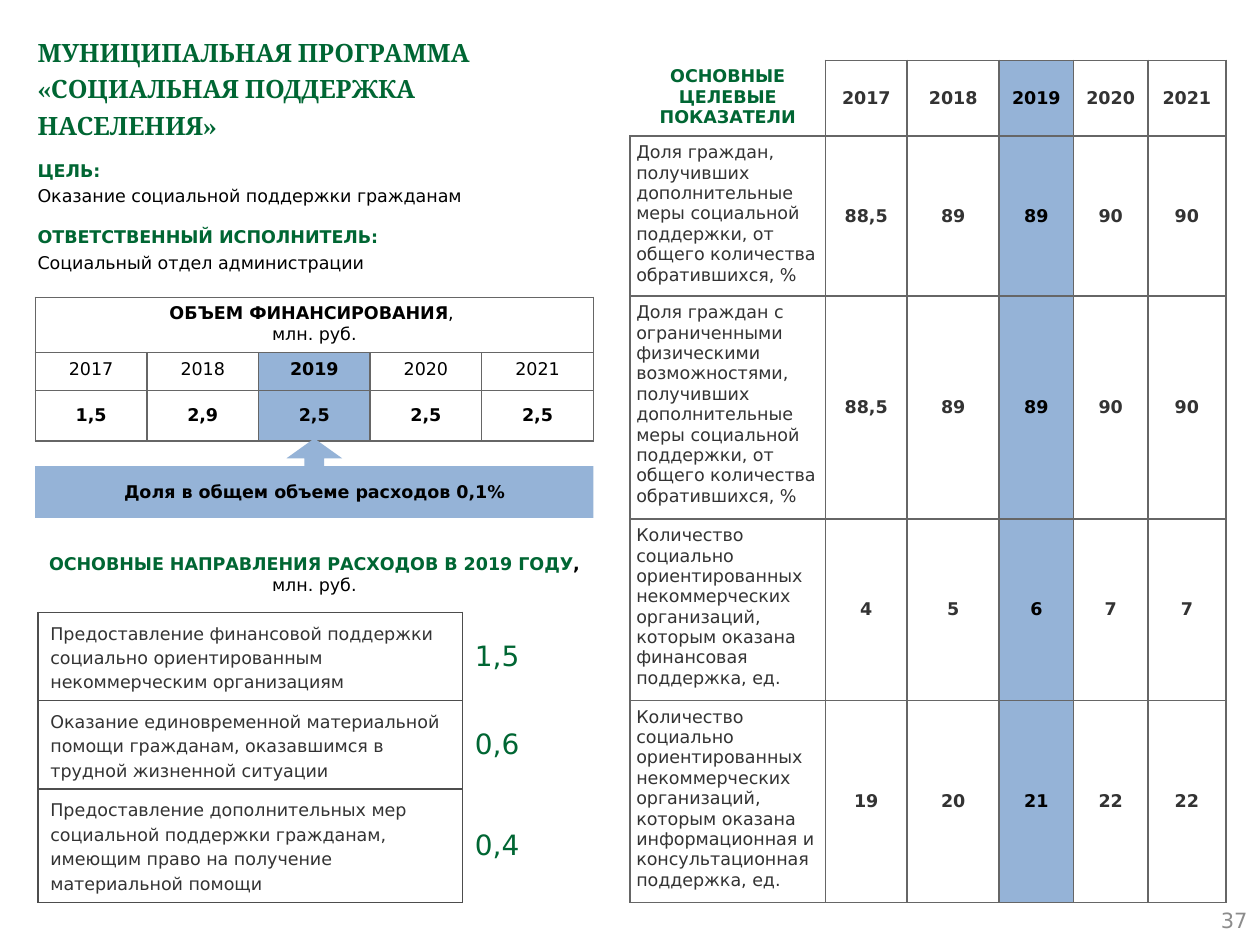
from lxml import etree
from pptx import Presentation, util as u
from pptx.dml.color import RGBColor
from pptx.enum import shapes, text
from pptx.oxml.ns import qn

GREEN = RGBColor(0x00, 0x66, 0x33)
BLUE = RGBColor(0x95, 0xB3, 0xD7)
BLACK = RGBColor(0, 0, 0)
DARK = RGBColor(0x33, 0x33, 0x33)
PAGE_GRAY = RGBColor(0x8C, 0x8C, 0x8C)
RULE_GRAY = RGBColor(0x66, 0x66, 0x66)
RULE_DARK = RGBColor(0x4D, 0x4D, 0x4D)

LEFT, CENTER, RIGHT = (text.PP_ALIGN.LEFT, text.PP_ALIGN.CENTER, text.PP_ALIGN.RIGHT)
TOP, MIDDLE = text.MSO_ANCHOR.TOP, text.MSO_ANCHOR.MIDDLE
NO_STYLE = "{2D5ABB26-0587-4C30-8999-92F81FD0307C}"
YEARS = ["2017", "2018", "2019", "2020", "2021"]
CURRENT = YEARS.index("2019")
FUNDING = ["1,5", "2,9", "2,5", "2,5", "2,5"]
EXPENSES = [
    ("Предоставление финансовой поддержки социально ориентированным "
     "некоммерческим организациям", "1,5"),
    ("Оказание единовременной материальной помощи гражданам, оказавшимся "
     "в трудной жизненной ситуации", "0,6"),
    ("Предоставление дополнительных мер социальной поддержки гражданам, "
     "имеющим право на получение материальной помощи", "0,4"),
]
INDICATORS = [
    ("Доля граждан, получивших дополнительные меры социальной поддержки, "
     "от общего количества обратившихся, %", ["88,5", "89", "89", "90", "90"]),
    ("Доля граждан с ограниченными физическими возможностями, получивших "
     "дополнительные меры социальной поддержки, от общего количества "
     "обратившихся, %", ["88,5", "89", "89", "90", "90"]),
    ("Количество социально ориентированных некоммерческих организаций, "
     "которым оказана финансовая поддержка, ед.", ["4", "5", "6", "7", "7"]),
    ("Количество социально ориентированных некоммерческих организаций, "
     "которым оказана информационная и консультационная поддержка, ед.",
     ["19", "20", "21", "22", "22"]),
]


def run(value, color=BLACK, bold=False, size=10, name="DejaVu Sans"):
    """Describe one run as its text, colour and font values."""
    return value, color, {"bold": bold, "size": u.Pt(size), "name": name}


def write(tf, paragraphs, **fmt):
    """Fill a text frame with paragraphs given as lists of runs."""
    for i, runs in enumerate(paragraphs):
        p = tf.add_paragraph() if i else tf.paragraphs[0]
        for key, value in fmt.items():
            setattr(p, key, value)
        for value, color, font in runs:
            for j, line in enumerate(value.split("\n")):
                if j:
                    p.add_line_break()
                r = p.add_run()
                r.text = line
                r.font.color.rgb = color
                for key, setting in font.items():
                    setattr(r.font, key, setting)


def add_text(s, at, paragraphs, anchor=TOP, **fmt):
    """Add a wrapping text box and return its text frame."""
    tf = s.shapes.add_textbox(*map(u.Inches, at)).text_frame
    tf.word_wrap = True
    tf.vertical_anchor = anchor
    write(tf, paragraphs, **fmt)
    return tf


def add_block(s, kind, at, adjustments, runs, fill=None):
    """Add a preset shape without outline and with centred text."""
    sp = s.shapes.add_shape(kind, *map(u.Inches, at))
    sp.shadow.inherit = False
    sp.line.fill.background()
    for i, value in enumerate(adjustments):
        sp.adjustments[i] = value
    if fill is None:
        sp.fill.background()
    else:
        sp.fill.solid()
        sp.fill.fore_color.rgb = fill
    sp.text_frame.word_wrap = True
    sp.text_frame.vertical_anchor = MIDDLE
    write(sp.text_frame, [runs], alignment=CENTER)


def add_table(s, left, top, cols, rows):
    """Add an unstyled table with the given column widths and row heights."""
    size = map(u.Inches, (left, top, sum(cols), sum(rows)))
    table = s.shapes.add_table(len(rows), len(cols), *size).table
    table._tbl.tblPr.find(qn("a:tableStyleId")).text = NO_STYLE
    for column, width in zip(table.columns, cols):
        column.width = u.Inches(width)
    for row, height in zip(table.rows, rows):
        row.height = u.Inches(height)
    return table


def set_cell(cell, paragraphs, rule, sides="LRTB", fill=None, anchor=MIDDLE,
             inset=0.05, **fmt):
    """Set the borders, fill, margins and text of one table cell."""
    tcPr = cell._tc.get_or_add_tcPr()
    for side in sides:
        ln = etree.SubElement(tcPr, qn(f"a:ln{side}"), w=str(u.Pt(1)))
        solid = etree.SubElement(ln, qn("a:solidFill"))
        etree.SubElement(solid, qn("a:srgbClr"), val=str(rule))
    if fill is None:
        cell.fill.background()
    else:
        cell.fill.solid()
        cell.fill.fore_color.rgb = fill
    cell.vertical_anchor = anchor
    if inset is not None:
        for side in ("left", "right", "top", "bottom"):
            setattr(cell, f"margin_{side}", u.Inches(inset))
    write(cell.text_frame, paragraphs, **fmt)


def add_funding(s):
    """Add the table of funding by year."""
    table = add_table(s, 0.28, 2.36, [4.43 / 5] * 5, [0.44, 0.3, 0.4])
    table.cell(0, 0).merge(table.cell(0, 4))
    heading = [[run("ОБЪЕМ ФИНАНСИРОВАНИЯ", bold=True), run(", ")],
               [run("млн. руб.")]]
    for i, (year, amount) in enumerate(zip(YEARS, FUNDING)):
        current = i == CURRENT
        fill = BLUE if current else None
        set_cell(table.cell(0, i), [] if i else heading, RULE_GRAY,
                 anchor=TOP, alignment=CENTER)
        set_cell(table.cell(1, i), [[run(year, bold=current)]], RULE_GRAY,
                 fill=fill, anchor=TOP, alignment=CENTER)
        set_cell(table.cell(2, i), [[run(amount, bold=True)]], RULE_GRAY,
                 fill=fill, alignment=CENTER)


def add_expenses(s):
    """Add the table of main spending directions."""
    table = add_table(s, 0.3, 4.86, [3.37, 1.89], [0.7, 0.7, 0.9])
    for i, (purpose, amount) in enumerate(EXPENSES):
        set_cell(table.cell(i, 0), [[run(purpose, DARK)]], RULE_DARK,
                 inset=None, line_spacing=1.2)
        set_cell(table.cell(i, 1), [[run(amount, GREEN, size=16)]], RULE_DARK,
                 sides="L", inset=None)


def add_indicators(s):
    """Add the table of target indicators by year."""
    table = add_table(s, 5, 0.48, [1.55, 0.65, 0.73, 0.59, 0.59, 0.62],
                      [0.6, 1.27, 1.77, 1.44, 1.6])
    heading = run("ОСНОВНЫЕ ЦЕЛЕВЫЕ ПОКАЗАТЕЛИ", GREEN, True)
    set_cell(table.cell(0, 0), [[heading]], RULE_GRAY, sides="RB", anchor=TOP,
             alignment=CENTER)
    for i, (label, _) in enumerate(INDICATORS, 1):
        set_cell(table.cell(i, 0), [[run(label, DARK)]], RULE_GRAY, anchor=TOP)
    for i, values in enumerate([YEARS] + [values for _, values in INDICATORS]):
        for j, value in enumerate(values):
            color, fill = (BLACK, BLUE) if j == CURRENT else (DARK, None)
            set_cell(table.cell(i, j + 1), [[run(value, color, True)]],
                     RULE_GRAY, fill=fill, alignment=CENTER)


def main():
    """Build the programme slide and save it."""
    prs = Presentation()
    prs.slide_width, prs.slide_height = u.Inches(10), u.Inches(7.5)
    s = prs.slides.add_slide(prs.slide_layouts[6])
    title = "МУНИЦИПАЛЬНАЯ ПРОГРАММА \n«СОЦИАЛЬНАЯ ПОДДЕРЖКА \nНАСЕЛЕНИЯ»"
    add_text(s, (0.2, 0.2, 9.61, 0.79),
             [[run(title, GREEN, True, 14.4, "Cambria")]], line_spacing=1.2)
    add_text(s, (7.67, 7.1, 2.33, 0.4), [[run("37", PAGE_GRAY, size=12)]],
             MIDDLE, alignment=RIGHT)
    tf = add_text(s, (0.2, 1.19, 4.5, 1.03), [
        [run("ЦЕЛЬ:", GREEN, True)],
        [run("Оказание социальной поддержки гражданам")],
        [run("ОТВЕТСТВЕННЫЙ ИСПОЛНИТЕЛЬ:", GREEN, True)],
        [run("Социальный отдел администрации")],
    ], line_spacing=1.2)
    tf.paragraphs[2].space_before = u.Pt(9)
    add_funding(s)
    add_block(s, shapes.MSO_SHAPE.PENTAGON, (0.28, 4.34, 4.43, 0.43), [0], [
        run("ОСНОВНЫЕ НАПРАВЛЕНИЯ РАСХОДОВ В 2019 ГОДУ", GREEN, True),
        run(", ", bold=True), run("млн. руб.")])
    add_block(s, shapes.MSO_SHAPE.UP_ARROW_CALLOUT, (0.28, 3.48, 4.43, 0.63),
              [0.25, 0.35, 0.25, 0.65],
              [run("Доля в общем объеме расходов 0,1%", bold=True)], BLUE)
    add_expenses(s)
    add_indicators(s)
    prs.save("out.pptx")


if __name__ == "__main__":
    main()
